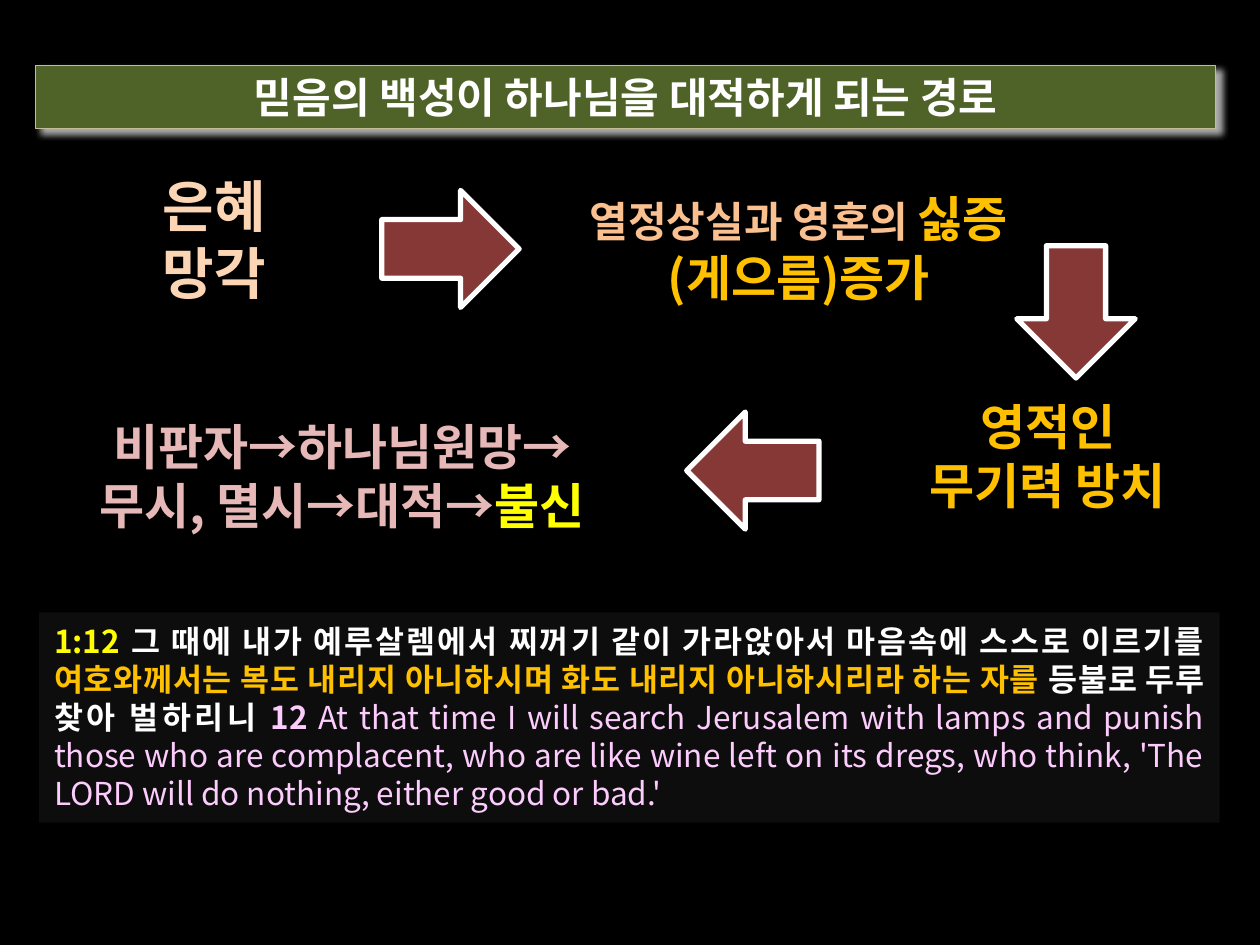
from dataclasses import dataclass

from lxml import etree
from pptx import Presentation
from pptx import util as u
from pptx.dml.color import RGBColor
from pptx.enum import shapes, text
from pptx.oxml import ns


@dataclass(frozen=True)
class Theme:
    font: str = "Noto Sans CJK KR"
    background: str = "000000"
    banner: str = "4F6228"
    banner_line: str = "C4BD97"
    banner_shadow: str = "D9D9D9"
    panel: str = "0D0D0D"
    arrow: str = "C0504D"
    white: str = "FFFFFF"
    yellow: str = "FFFF00"
    gold: str = "FFC000"
    peach: str = "FCD5B5"
    orange: str = "FAC090"
    rose: str = "E6B9B8"
    lilac: str = "FCCCFC"
    verse_size: int = 18
    title_size: int = 24
    step_size: int = 28
    start_size: int = 32


@dataclass(frozen=True)
class Run:
    text: str
    color: str
    size: int
    bold: bool = True


def add_xml(parent, tag, **attributes):
    return etree.SubElement(parent, ns.qn(tag), attributes)


class SlideBuilder:
    def __init__(self, slide, theme):
        self.slide = slide
        self.theme = theme
        self.fill(slide.background, theme.background)

    def fill(self, target, color):
        target.fill.solid()
        target.fill.fore_color.rgb = RGBColor.from_string(color)

    def outline(self, shape, color, width):
        shape.line.color.rgb = RGBColor.from_string(color)
        shape.line.width = u.Pt(width)

    def shadow(self, shape, color, alpha, blur, distance, angle):
        shape.shadow.inherit = False
        effects = shape.element.spPr.find(ns.qn("a:effectLst"))
        outer = add_xml(effects, "a:outerShdw", blurRad=str(u.Pt(blur)),
                        dist=str(u.Pt(distance)), dir=str(angle * 60000),
                        algn="ctr", rotWithShape="0")
        shade = add_xml(outer, "a:srgbClr", val=color)
        add_xml(shade, "a:alpha", val=str(alpha * 1000))

    def add_text(self, shape, paragraphs, align=text.PP_ALIGN.CENTER):
        frame = shape.text_frame
        frame.word_wrap = True
        for index, runs in enumerate(paragraphs):
            paragraph = frame.add_paragraph() if index else frame.paragraphs[0]
            paragraph.alignment = align
            for item in runs:
                run = paragraph.add_run()
                run.text = item.text
                run.font.name = self.theme.font
                run.font.size = u.Pt(item.size)
                run.font.bold = item.bold
                run.font.color.rgb = RGBColor.from_string(item.color)
                # Hangul takes the East Asian typeface
                latin = run.font._element.find(ns.qn("a:latin"))
                latin.addnext(latin.makeelement(
                    ns.qn("a:ea"), {"typeface": self.theme.font}))

    def banner(self, left, top, width, height, title):
        shape = self.slide.shapes.title
        shape.left, shape.top = u.Inches(left), u.Inches(top)
        shape.width, shape.height = u.Inches(width), u.Inches(height)
        self.fill(shape, self.theme.banner)
        self.outline(shape, self.theme.banner_line, 0.75)
        self.shadow(shape, self.theme.banner_shadow, 78, 4, 4, 45)
        shape.text_frame.auto_size = text.MSO_AUTO_SIZE.NONE
        shape.text_frame.vertical_anchor = text.MSO_ANCHOR.MIDDLE
        self.add_text(shape, [[Run(title, self.theme.white, self.theme.title_size)]])

    def label(self, left, top, width, height, paragraphs):
        box = self.slide.shapes.add_textbox(
            u.Inches(left), u.Inches(top), u.Inches(width), u.Inches(height))
        self.add_text(box, paragraphs)

    def arrow(self, left, top, width, height, rotation=0):
        shape = self.slide.shapes.add_shape(
            shapes.MSO_SHAPE.DOWN_ARROW, u.Inches(left), u.Inches(top),
            u.Inches(width), u.Inches(height))
        shape.rotation = rotation
        self.fill(shape, self.theme.arrow)
        color = shape.element.spPr.find(ns.qn("a:solidFill"))[0]
        add_xml(color, "a:alpha", val="70000")
        self.outline(shape, self.theme.white, 3)
        self.shadow(shape, "000000", 38, 3.1, 1.6, 90)

    def verse(self, left, top, width, height, runs):
        shape = self.slide.shapes.add_shape(
            shapes.MSO_SHAPE.RECTANGLE, u.Inches(left), u.Inches(top),
            u.Inches(width), u.Inches(height))
        shape.shadow.inherit = False
        self.fill(shape, self.theme.panel)
        shape.line.fill.background()
        frame = shape.text_frame
        frame.margin_left = frame.margin_right = u.Inches(0.12)
        frame.margin_top = frame.margin_bottom = u.Inches(0.08)
        frame.vertical_anchor = text.MSO_ANCHOR.TOP
        self.add_text(shape, [runs], text.PP_ALIGN.JUSTIFY)


def main():
    presentation = Presentation()
    presentation.slide_width = u.Inches(10)
    presentation.slide_height = u.Inches(7.5)
    theme = Theme()
    slide = presentation.slides.add_slide(presentation.slide_layouts[5])
    builder = SlideBuilder(slide, theme)
    step, small = theme.step_size, theme.verse_size

    # Title banner
    builder.banner(0.28, 0.52, 9.37, 0.5, "믿음의 백성이 하나님을 대적하게 되는 경로")

    # Steps of the path
    builder.label(0.84, 1.31, 1.72, 1.18, [
        [Run(line, theme.peach, theme.start_size)] for line in ("은혜", "망각")])
    builder.label(4.45, 1.45, 3.78, 1.04, [[
        Run("열정상실과 영혼의 ", theme.orange, theme.title_size),
        Run("싫증(게으름)증가", theme.gold, step)]])
    builder.label(6.86, 3.1, 2.91, 1.04, [
        [Run(line, theme.gold, step)] for line in ("영적인", "무기력 방치")])
    builder.label(0.59, 3.26, 4.25, 1.04, [[
        Run("비판자→하나님원망→무시, 멸시→대적→", theme.rose, step),
        Run("불신", theme.yellow, step)]])

    # Arrows between the steps
    builder.arrow(3.11, 1.43, 0.93, 1.09, rotation=270)
    builder.arrow(8.07, 1.95, 0.94, 1.05)
    builder.arrow(5.51, 3.21, 0.93, 1.05, rotation=90)

    # Scripture panel
    builder.verse(0.31, 4.86, 9.37, 1.67, [
        Run("1:12 ", theme.yellow, small),
        Run("그 때에 내가 예루살렘에서 찌꺼기 같이 가라앉아서 마음속에 스스로 이르기를 ",
            theme.white, small),
        Run("여호와께서는 복도 내리지 아니하시며 화도 내리지 아니하시리라 하는 자를 ",
            theme.gold, small),
        Run("등불로 두루 찾아 벌하리니 ", theme.white, small),
        Run("12 ", theme.lilac, small),
        Run("At that time I will search Jerusalem with lamps and punish those "
            "who are complacent, who are like wine left on its dregs, who think, "
            "'The LORD will do nothing, either good or bad.'",
            theme.lilac, small, bold=False)])

    presentation.save("out.pptx")


if __name__ == "__main__":
    main()
